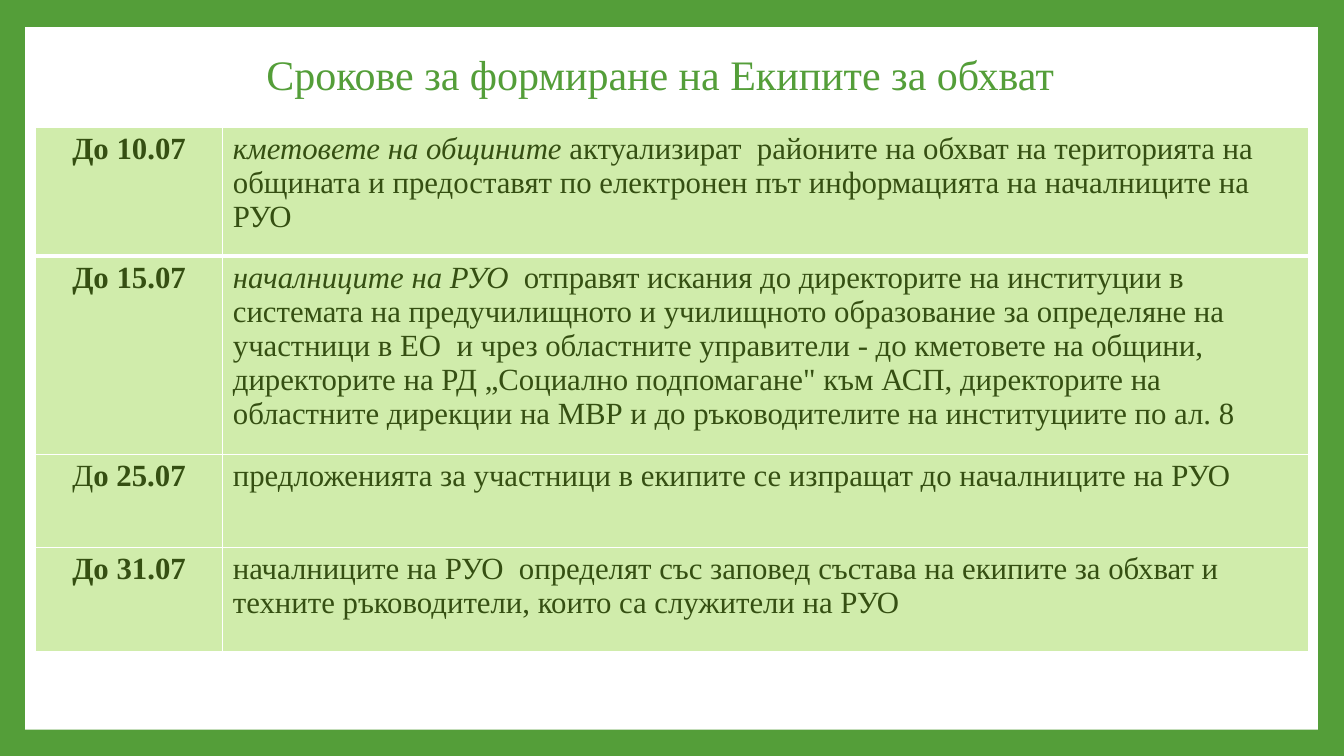
from lxml import etree
from pptx import Presentation, util as u
from pptx.dml.color import RGBColor
from pptx.enum import shapes, text
from pptx.oxml import ns

GREEN = RGBColor(0x54, 0x9E, 0x39)
DARK = RGBColor(0x35, 0x4F, 0x12)
PALE = RGBColor(0xD0, 0xEC, 0xAB)
WHITE = RGBColor(0xFF, 0xFF, 0xFF)
FONT = "Times New Roman"
WIDTH, HEIGHT = 13.33, 7.5
COLUMNS = (1.86, 10.77)
ROWS = (1.28, 1.97, 0.92, 1.04)
TITLE = "Срокове за формиране на Екипите за обхват"
BOLD, ITALIC, PLAIN = {"bold": True}, {"italic": True}, {}
DEADLINES = [
    ([("До 10.07", BOLD)],
     [("кметовете на общините ", ITALIC),
      ("актуализират  районите на обхват на територията на общината и предоставят "
       "по електронен път информацията на началниците на РУО", PLAIN)]),
    ([("До 15.07", BOLD)],
     [("началниците на РУО  ", ITALIC),
      ("отправят искания до директорите на институции в системата на предучилищното "
       "и училищното образование за определяне на участници в ЕО  и чрез областните "
       "управители - до кметовете на общини, директорите на РД „Социално подпомагане\" "
       "към АСП, директорите на областните дирекции на МВР и до ръководителите на "
       "институциите по ал. 8", PLAIN)]),
    ([("Д", PLAIN), ("о 25.07", BOLD)],
     [("предложенията за участници в екипите се изпращат до началниците на РУО", PLAIN)]),
    ([("До 31.07", BOLD)],
     [("началниците на РУО  определят със заповед състава на екипите за обхват и "
       "техните ръководители, които са служители на РУО", PLAIN)]),
]


def write(p, runs, size, color, align):
    """Fill a paragraph with styled runs."""
    p.alignment = align
    for words, style in runs:
        r = p.add_run()
        r.text = words
        look = {"name": FONT, "size": u.Pt(size), "bold": False, "italic": False}
        for key, value in (look | style).items():
            setattr(r.font, key, value)
        r.font.color.rgb = color


def place(sp, box):
    """Move a shape to a box given in inches."""
    for key, value in zip(("left", "top", "width", "height"), box):
        setattr(sp, key, u.Inches(value))


def add_frame(s, box):
    """Draw the white panel on the green background, behind everything else."""
    s.background.fill.solid()
    s.background.fill.fore_color.rgb = GREEN
    sp = s.shapes.add_shape(shapes.MSO_SHAPE.RECTANGLE, *map(u.Inches, box))
    sp.shadow.inherit = False
    sp.fill.solid()
    sp.fill.fore_color.rgb = WHITE
    sp.line.fill.background()
    s.shapes.title.element.addprevious(sp.element)


def add_title(s, box):
    """Place and format the title placeholder."""
    sp = s.shapes.title
    place(sp, box)
    tf = sp.text_frame
    for key, value in {"word_wrap": True, "auto_size": text.MSO_AUTO_SIZE.NONE,
                       "vertical_anchor": text.MSO_ANCHOR.MIDDLE}.items():
        setattr(tf, key, value)
    p = tf.paragraphs[0]
    p.line_spacing = 0.9
    write(p, [(TITLE, PLAIN)], 30, GREEN, text.PP_ALIGN.CENTER)


def format_cell(cell, top, bottom):
    """Give a cell white borders and a pale fill."""
    tc_pr = cell._tc.get_or_add_tcPr()
    for side, points in {"L": 1, "R": 1, "T": top, "B": bottom}.items():
        ln = etree.SubElement(tc_pr, ns.qn(f"a:ln{side}"), w=str(u.Pt(points)))
        fill = etree.SubElement(ln, ns.qn("a:solidFill"))
        etree.SubElement(fill, ns.qn("a:srgbClr"), val=str(WHITE))
    cell.fill.solid()
    cell.fill.fore_color.rgb = PALE


def add_deadlines(s, left, top):
    """Build the table of deadlines from its top left corner."""
    box = map(u.Inches, (left, top, sum(COLUMNS), sum(ROWS)))
    table = s.shapes.add_table(len(ROWS), len(COLUMNS), *box).table
    table.first_row = table.horz_banding = False
    for column, width in zip(table.columns, COLUMNS):
        column.width = u.Inches(width)
    aligns = (text.PP_ALIGN.CENTER, text.PP_ALIGN.LEFT)
    for i, (height, entries) in enumerate(zip(ROWS, DEADLINES)):
        table.rows[i].height = u.Inches(height)
        for j, (runs, align) in enumerate(zip(entries, aligns)):
            cell = table.cell(i, j)
            format_cell(cell, 3 if i == 1 else 1, 3 if i == 0 else 1)
            write(cell.text_frame.paragraphs[0], runs, 22, DARK, align)


def main():
    """Build and save the slide."""
    prs = Presentation()
    prs.slide_width, prs.slide_height = u.Inches(WIDTH), u.Inches(HEIGHT)
    s = prs.slides.add_slide(prs.slide_layouts[5])
    add_frame(s, (0.25, 0.27, 12.82, 6.97))
    add_title(s, (0.69, 0.4, 11.72, 0.73))
    add_deadlines(s, 0.35, 1.26)
    prs.save("out.pptx")


if __name__ == "__main__":
    main()
